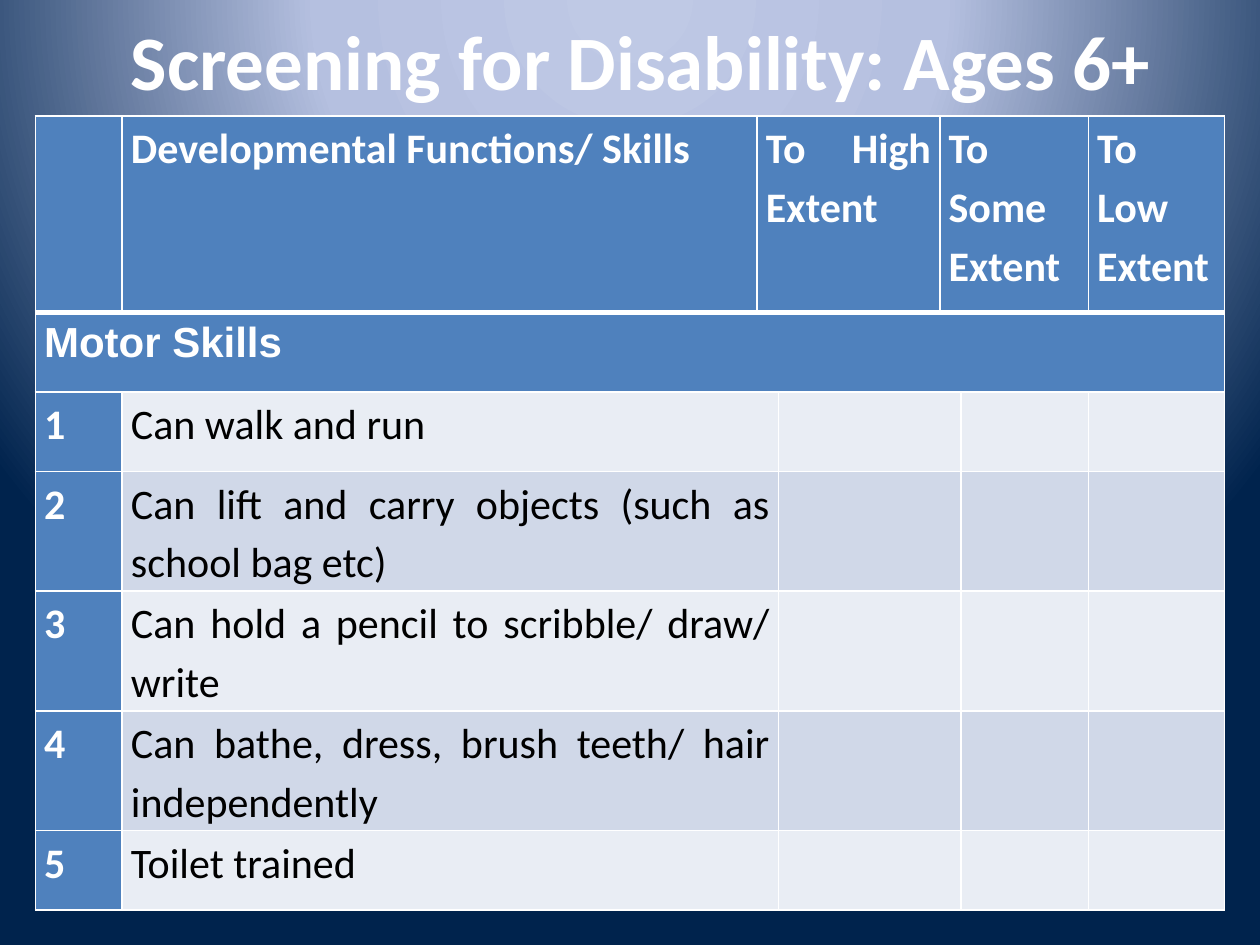
from dataclasses import dataclass

from lxml.etree import SubElement as Sub
from pptx import Presentation
from pptx.dml.color import RGBColor as Rgb
from pptx.enum.text import MSO_ANCHOR as Anchor, PP_ALIGN as Align
from pptx.oxml.ns import qn
from pptx.util import Inches, Pt

HUE = {
    "white": "FFFFFF", "black": "000000", "blue": "4F81BD",
    "light": "E9EDF4", "mid": "D0D8E8",
    "glow": "BFC9E5", "haze": "B5C0E0", "navy": "00234D",
}
WIDE, HIGH = 10, 7.5
COLS = [0.69, 5.04, 0.17, 1.28, 0.17, 1.01, 1.08]
ROWS = [1.56, 0.63, 0.63, 0.95, 0.95, 0.95, 0.63]
LEFT, TOP = 0.028 * WIDE, 0.123 * HIGH
HEAD = [(1, 1, "Developmental Functions/ Skills"), (2, 3, "To High Extent"),
        (4, 5, "To Some Extent"), (6, 6, "To Low Extent")]


@dataclass
class Skill:
    num: int
    text: str


SKILLS = [Skill(n, t) for n, t in enumerate([
    "Can walk and run",
    "Can lift and carry objects (such as school bag etc)",
    "Can hold a pencil to scribble/ draw/ write",
    "Can bathe, dress, brush teeth/ hair independently",
    "Toilet trained",
], 1)]


def write(frame, text: str, size=24, font="Calibri", hue="white",
          bold=True, align=Align.JUSTIFY, space=1.15) -> None:
    """Put one formatted paragraph in a text frame."""
    para = frame.paragraphs[0]
    para.alignment, para.line_spacing = align, space
    run = para.add_run()
    run.text = text
    run.font.size, run.font.name, run.font.bold = Pt(size), font, bold
    run.font.color.rgb = Rgb.from_string(HUE[hue])


def glow(slide) -> None:
    """Fill the background with a round gradient centred above the slide."""
    slide.background.fill.gradient()
    grad = slide.element.find(".//" + qn("a:gradFill"))
    for part in list(grad):
        grad.remove(part)
    stops = Sub(grad, qn("a:gsLst"))
    for share, hue in [(0, "glow"), (40, "haze"), (100, "navy")]:
        stop = Sub(stops, qn("a:gs"), pos=str(share * 1000))
        Sub(stop, qn("a:srgbClr"), val=HUE[hue])
    ring = Sub(grad, qn("a:path"), path="circle")
    Sub(ring, qn("a:fillToRect"), l="50000", t="-80000", r="50000", b="180000")


def edge(cell, side: str, width: float) -> None:
    """Draw one white border of a cell."""
    props = cell._tc.get_or_add_tcPr()
    line = Sub(props, qn("a:ln" + side), w=str(Pt(width)))
    Sub(Sub(line, qn("a:solidFill")), qn("a:srgbClr"), val=HUE["white"])


def style(cell, row: int, col: int) -> None:
    """Set the margins, borders and fill of a cell."""
    cell.margin_left = cell.margin_right = Inches(0.07)
    cell.margin_top = cell.margin_bottom = 0
    for side in "LRTB":
        thick = (row, side) in [(0, "B"), (1, "T")]
        edge(cell, side, 3 if thick else 1)
    band = "mid" if row % 2 else "light"
    cell.fill.solid()
    cell.fill.fore_color.rgb = Rgb.from_string(
        HUE["blue" if row < 2 or col == 0 else band])


def join(table, row: int, first: int, last: int):
    """Merge a run of cells in a row and return the leading one."""
    cell = table.cell(row, first)
    if last > first:
        cell.merge(table.cell(row, last))
    return cell


def grid(slide) -> None:
    """Build the table of skills."""
    table = slide.shapes.add_table(
        len(ROWS), len(COLS), Inches(LEFT), Inches(TOP),
        Inches(sum(COLS)), Inches(sum(ROWS))).table
    for col, width in zip(table.columns, COLS):
        col.width = Inches(width)
    for row, height in zip(table.rows, ROWS):
        row.height = Inches(height)
    for r in range(len(ROWS)):
        for c in range(len(COLS)):
            style(table.cell(r, c), r, c)

    # Header and section rows
    for first, last, text in HEAD:
        write(join(table, 0, first, last).text_frame, text)
    write(join(table, 1, 0, len(COLS) - 1).text_frame, "Motor Skills",
          font="Arial")

    # Skill rows
    for r, skill in enumerate(SKILLS, 2):
        write(table.cell(r, 0).text_frame, str(skill.num))
        write(join(table, r, 1, 2).text_frame, skill.text,
              hue="black", bold=False)
        join(table, r, 3, 4)


def main() -> None:
    deck = Presentation()
    deck.slide_width, deck.slide_height = Inches(WIDE), Inches(HIGH)
    slide = deck.slides.add_slide(deck.slide_layouts[5])
    glow(slide)

    # Title
    title = slide.shapes.title
    title.left, title.top = Inches(0.059 * WIDE), Inches(0.01)
    title.width, title.height = Inches(0.9 * WIDE), Inches(0.124 * HIGH)
    title.text_frame.vertical_anchor = Anchor.MIDDLE
    write(title.text_frame, "Screening for Disability: Ages 6+",
          size=44, align=Align.CENTER, space=1.0)

    grid(slide)
    deck.save("out.pptx")


if __name__ == "__main__":
    main()
